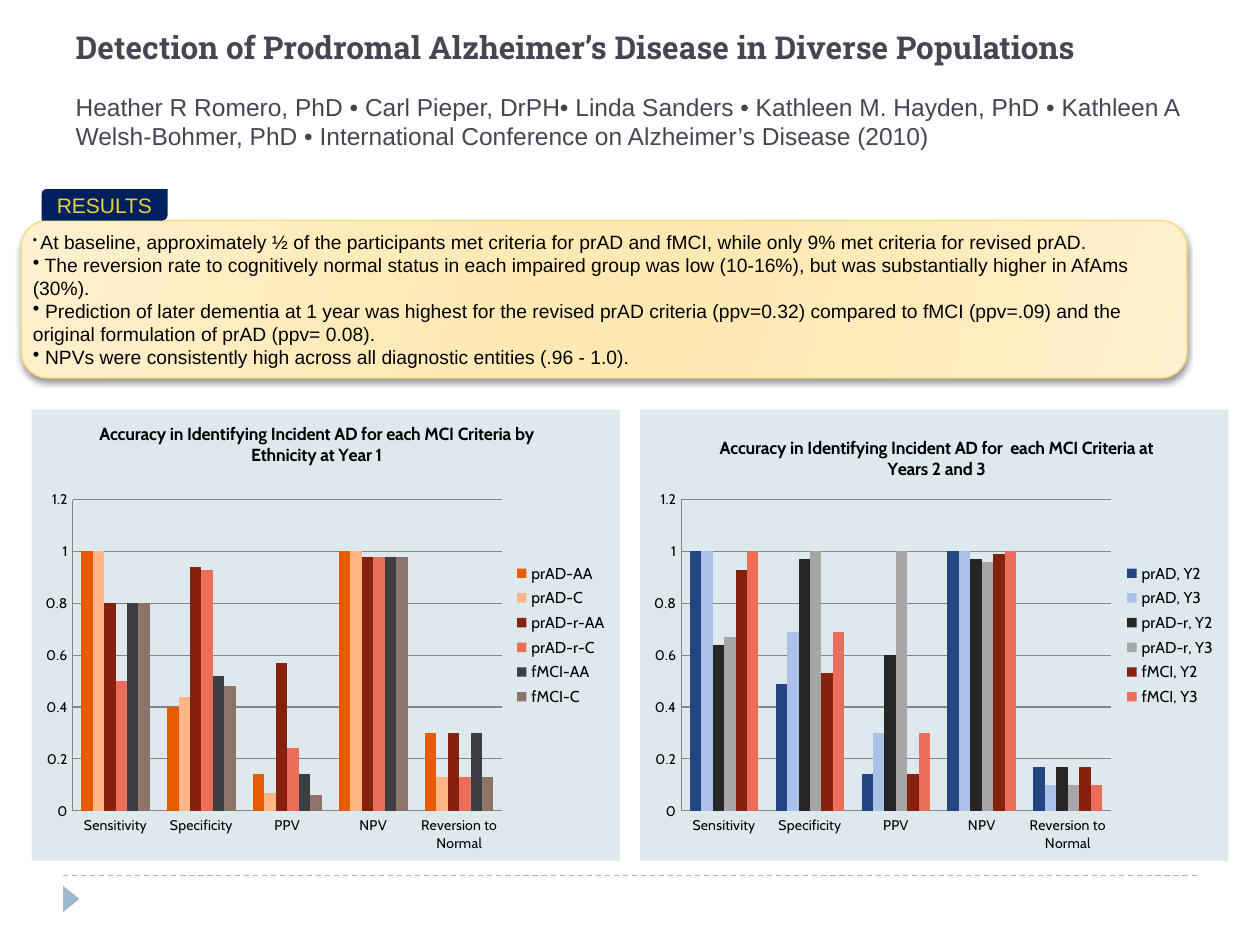
from lxml import etree
from pptx import Presentation
from pptx.chart.data import CategoryChartData
from pptx.dml.color import RGBColor
from pptx.enum.chart import XL_CHART_TYPE, XL_LEGEND_POSITION, XL_TICK_MARK
from pptx.enum.dml import MSO_LINE
from pptx.enum.shapes import MSO_CONNECTOR, MSO_SHAPE
from pptx.enum.text import MSO_ANCHOR, PP_ALIGN
from pptx.oxml import parse_xml
from pptx.oxml.ns import nsdecls, qn
from pptx.util import Inches, Pt

COLUMN = XL_CHART_TYPE.COLUMN_CLUSTERED
RIGHT = XL_LEGEND_POSITION.RIGHT
NO_TICK = XL_TICK_MARK.NONE
DASH = MSO_LINE.DASH
LEFT, CENTER = PP_ALIGN.LEFT, PP_ALIGN.CENTER
TOP, MIDDLE = MSO_ANCHOR.TOP, MSO_ANCHOR.MIDDLE

COLORS = {
    "ink": "464653", "black": "000000", "rule": "9FB8CD", "navy": "002060",
    "gold": "EAD13E", "edge": "FADA7A", "panel": "DDE9EC", "grid": "868686",
}
GLOW = [(0, "FFF0CF"), (30, "FFEBBA"), (45, "FFE9B3"),
        (55, "FFE9B3"), (73, "FFEBBA"), (100, "FFF0CF")]

HEAD = "Detection of Prodromal Alzheimer’s Disease in Diverse Populations"
NAMES = ("Heather R Romero, PhD • Carl Pieper, DrPH• Linda Sanders • "
         "Kathleen M. Hayden, PhD • Kathleen A Welsh-Bohmer, PhD • "
         "International Conference on Alzheimer’s Disease (2010)")
POINTS = [
    "At baseline, approximately ½ of the participants met criteria for prAD and fMCI, "
    "while only 9% met criteria for revised prAD.",
    " The reversion rate to cognitively normal status in each impaired group was low "
    "(10-16%), but was substantially higher in AfAms (30%).",
    " Prediction of later dementia at 1 year was highest for the revised prAD criteria "
    "(ppv=0.32) compared to fMCI (ppv=.09) and the original formulation of prAD (ppv= 0.08).",
    " NPVs were consistently high across all diagnostic entities (.96 - 1.0).",
]
CATS = ["Sensitivity", "Specificity", "PPV", "NPV", "Reversion to Normal"]
ETHNIC = [
    ("prAD-AA", "E75C01", (1, 0.4, 0.14, 1, 0.3)),
    ("prAD-C", "FEB687", (1, 0.44, 0.07, 1, 0.13)),
    ("prAD-r-AA", "862110", (0.8, 0.94, 0.57, 0.98, 0.3)),
    ("prAD-r-C", "EB6E5A", (0.5, 0.93, 0.24, 0.98, 0.13)),
    ("fMCI-AA", "3C3E42", (0.8, 0.52, 0.14, 0.98, 0.3)),
    ("fMCI-C", "8E736A", (0.8, 0.48, 0.06, 0.98, 0.13)),
]
YEARS = [
    ("prAD, Y2", "244583", (1, 0.49, 0.14, 1, 0.17)),
    ("prAD, Y3", "ACC1E8", (1, 0.69, 0.3, 1, 0.1)),
    ("prAD-r, Y2", "262626", (0.64, 0.97, 0.6, 0.97, 0.17)),
    ("prAD-r, Y3", "A6A6A6", (0.67, 1, 1, 0.96, 0.1)),
    ("fMCI, Y2", "862110", (0.93, 0.53, 0.14, 0.99, 0.17)),
    ("fMCI, Y3", "EB6E5A", (1, 0.69, 0.3, 1, 0.1)),
]


def tint(name):
    return RGBColor.from_string(COLORS[name])


def style(font, face, size, color, bold=False):
    font.name, font.size, font.bold = face, Pt(size), bold
    font.color.rgb = tint(color)


def block(slide, kind, x, y, w, h, fill):
    shape = slide.shapes.add_shape(kind, Inches(x), Inches(y), Inches(w), Inches(h))
    shape.shadow.inherit = False
    shape.fill.solid()
    shape.fill.fore_color.rgb = tint(fill)
    shape.line.fill.background()
    frame = shape.text_frame
    frame.margin_left = frame.margin_right = Inches(0.03)
    frame.margin_top = frame.margin_bottom = Inches(0.01)
    frame.vertical_anchor = MIDDLE
    return shape


def footer(slide, x, y, w):
    rule = slide.shapes.add_connector(
        MSO_CONNECTOR.STRAIGHT, Inches(x), Inches(y), Inches(x + w), Inches(y))
    rule.line.color.rgb = tint("rule")
    rule.line.width = Pt(0.75)
    rule.line.dash_style = DASH
    etree.SubElement(rule._element.spPr, qn("a:effectLst"))
    mark = block(slide, MSO_SHAPE.ISOSCELES_TRIANGLE, x - 0.04, y + 0.12, 0.21, 0.13, "rule")
    mark.rotation = 90


def header(slide, x, y, w, h):
    title = slide.shapes.title
    title.left, title.top, title.width, title.height = map(Inches, (x, y, w, h))
    frame = title.text_frame
    frame.text = HEAD + "\n" + NAMES
    frame.vertical_anchor = TOP
    top, sub = frame.paragraphs
    top.alignment = sub.alignment = LEFT
    sub.space_before = Pt(15)
    style(top.runs[0].font, "Roboto Slab", 18, "ink", True)
    style(sub.runs[0].font, "Arial", 14, "ink")


def results(slide, x, y, w, h):
    # Glowing panel
    panel = block(slide, MSO_SHAPE.ROUNDED_RECTANGLE, x, y, w, h, "edge")
    panel.line.color.rgb = tint("edge")
    panel.line.width = Pt(0.75)
    stops = "".join(f'<a:gs pos="{pos * 1000}"><a:srgbClr val="{hue}"/></a:gs>'
                    for pos, hue in GLOW)
    props = panel._element.spPr
    props.replace(props.find(qn("a:solidFill")), parse_xml(
        f'<a:gradFill {nsdecls("a")} rotWithShape="1"><a:gsLst>{stops}</a:gsLst>'
        f'<a:lin ang="{16 * 60000}" scaled="0"/></a:gradFill>'))
    props.find(qn("a:effectLst")).append(parse_xml(
        f'<a:outerShdw {nsdecls("a")} blurRad="{Pt(3)}" dist="{Pt(2)}" dir="5400000" '
        'rotWithShape="0"><a:srgbClr val="000000"><a:alpha val="40000"/>'
        '</a:srgbClr></a:outerShdw>'))

    # Bulleted findings
    frame = panel.text_frame
    frame.text = "\n".join(POINTS)
    for para in frame.paragraphs:
        para.alignment = LEFT
        style(para.runs[0].font, "Arial", 11, "black")
        bullet = etree.SubElement(para._p.get_or_add_pPr(), qn("a:buChar"))
        bullet.set("char", "•")
    # The first bullet takes its size from a small leading space
    first = frame.paragraphs[0]
    lead = first.add_run()
    lead.text = " "
    style(lead.font, "Arial", 7, "black")
    first.runs[0]._r.addprevious(lead._r)

    # Tab on the panel's upper edge
    tab = block(slide, MSO_SHAPE.ROUND_2_DIAG_RECTANGLE, x + 0.16, y - 0.25, 1, 0.25, "navy")
    tab.text_frame.text = "RESULTS"
    para = tab.text_frame.paragraphs[0]
    para.alignment = CENTER
    style(para.runs[0].font, "Arial", 12, "gold")


def place(owner, x, y, w=None, h=None):
    tags = [("xMode", "edge"), ("yMode", "edge"), ("x", x), ("y", y)]
    if w:
        tags = [("layoutTarget", "inner")] + tags + [("w", w), ("h", h)]
    inner = "".join(f'<c:{tag} val="{val}"/>' for tag, val in tags)
    for old in owner.findall(qn("c:layout")):
        owner.remove(old)
    layout = parse_xml(f'<c:layout {nsdecls("c")}><c:manualLayout>{inner}'
                       '</c:manualLayout></c:layout>')
    text = owner.find(qn("c:tx"))
    if text is None:
        owner.insert(0, layout)
    else:
        text.addnext(layout)


def bars(slide, x, y, w, h, title, rows, spot):
    data = CategoryChartData()
    data.categories = CATS
    for name, _, vals in rows:
        data.add_series(name, vals)
    chart = slide.shapes.add_chart(
        COLUMN, Inches(x), Inches(y), Inches(w), Inches(h), data).chart
    style(chart.font, "Cabin", 10, "black")
    chart._chartSpace.find(qn("c:chart")).addnext(parse_xml(
        f'<c:spPr {nsdecls("c", "a")}><a:solidFill><a:srgbClr val="{COLORS["panel"]}"/>'
        '</a:solidFill><a:ln><a:noFill/></a:ln></c:spPr>'))

    # Title and legend
    head = chart.chart_title
    head.text_frame.text = title
    style(head.text_frame.paragraphs[0].runs[0].font, "Cabin", 10, "black", True)
    head.include_in_layout = False
    place(head._element, *spot)
    chart.has_legend = True
    chart.legend.position = RIGHT
    chart.legend.include_in_layout = False
    style(chart.legend.font, "Cabin", 9, "black")

    # Axes
    for axis in (chart.category_axis, chart.value_axis):
        axis.major_tick_mark = axis.minor_tick_mark = NO_TICK
        style(axis.tick_labels.font, "Cabin", 8, "black")
        axis.format.line.color.rgb = tint("grid")
    scale = chart.value_axis
    scale.minimum_scale, scale.maximum_scale, scale.major_unit = 0, 1.2, 0.2
    scale.major_gridlines.format.line.color.rgb = tint("grid")

    # Columns
    plot = chart.plots[0]
    plot.gap_width, plot.overlap, plot.vary_by_categories = 150, 0, False
    for bar, (_, hue, _) in zip(plot.series, rows):
        bar.format.fill.solid()
        bar.format.fill.fore_color.rgb = RGBColor.from_string(hue)
    place(chart._chartSpace.find(".//" + qn("c:plotArea")), 0.07, 0.2, 0.73, 0.69)


def main():
    deck = Presentation()
    deck.slide_width, deck.slide_height = Inches(10), Inches(7.5)
    slide = deck.slides.add_slide(deck.slide_layouts[5])
    footer(slide, 0.5, 6.95, 9)
    results(slide, 0.17, 1.75, 9.25, 1.25)
    bars(slide, 0.25, 3.25, 4.67, 3.58, "Accuracy in Identifying Incident AD for each "
         "MCI Criteria by Ethnicity at Year 1", ETHNIC, (0.11, 0.02))
    bars(slide, 5.08, 3.25, 4.67, 3.58, "Accuracy in Identifying Incident AD for  each "
         "MCI Criteria at Years 2 and 3", YEARS, (0.13, 0.05))
    header(slide, 0.5, 0.17, 9, 1.08)
    deck.save("out.pptx")


if __name__ == "__main__":
    main()
